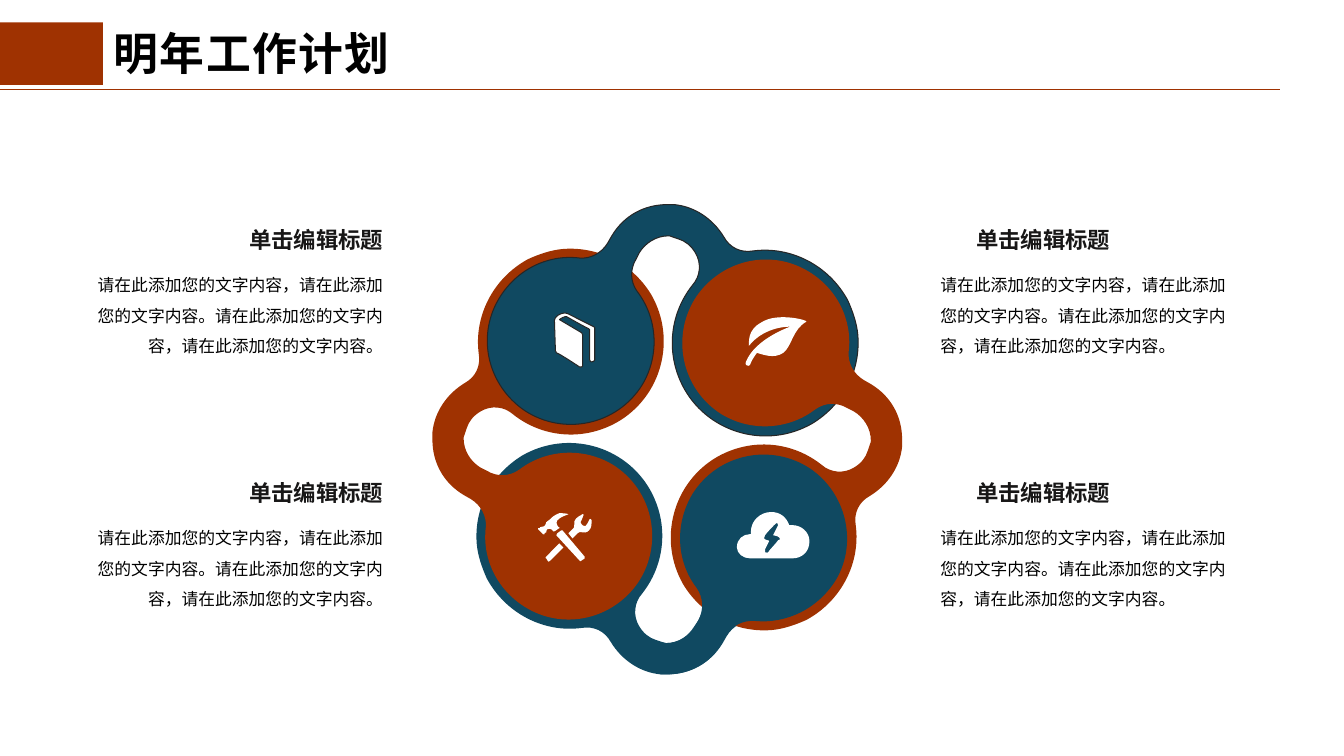
import pptx
import pptx.util
import pptx.dml.color
import pptx.enum.shapes
import pptx.enum.text
import pptx.oxml
import pptx.oxml.ns

Pt = pptx.util.Pt
Align = pptx.enum.text.PP_ALIGN
RED, BLUE, WHITE, DARK, BLACK = "9F3201", "104961", "FFFFFF", "262626", "000000"
UNIT = 0.72

LINK = """M 129 0 C 164 -3 198 14 217 45 C 243 90 227 147 183 172 C 149 191 109 187 80 164
C 71 156 58 155 48 161 C 41 165 36 171 34 178 L 32 184 C 31 186 31 187 31 188
C 31 200 38 211 48 217 L 54 220 C 64 226 76 226 86 219 C 112 199 149 196 179 214
C 219 239 230 292 204 331 C 179 367 132 378 95 357 C 65 340 49 308 53 276
C 54 265 48 254 38 248 L 31 244 C 11 232 0 212 0 189 L 0 182 C 2 162 14 144 32 133
C 43 127 48 116 46 104 C 41 67 60 29 95 10 C 106 5 118 1 129 0"""
TAIL = """M 32 51 C 14 81 16 118 36 144 C 43 154 43 166 38 176 L 34 182 C 28 192 18 199 6 199
L 2 198 L 0 230 L 7 230 C 30 230 50 218 61 199 L 66 191
C 71 182 82 176 94 177 C 125 180 157 165 175 135 C 196 98 184 50 149 26 C 110 0 57 11 32 51"""
TOOLS = """M 9 16 C 10 15 13 15 15 18 L 16 18 C 17 18 20 15 21 15 L 21 14
C 20 14 19 13 19 12 C 14 5 32 1 30 1 C 28 0 22 0 21 0 C 18 1 13 4 12 6 C 9 8 8 9 8 9
C 7 10 8 12 6 13 C 4 14 3 13 2 14 C 2 15 1 15 0 15 L 0 16 L 4 20 C 4 21 5 21 6 21
C 6 20 7 19 8 19 C 8 19 8 16 9 16
M 24 17 L 23 17 L 19 20 C 18 21 18 21 18 22 L 41 47 C 41 48 42 48 43 47 L 46 45
C 46 44 46 43 46 43
M 53 7 C 52 5 52 6 51 6 C 51 7 49 9 49 10 C 48 12 47 14 44 12 C 41 9 42 8 43 7
C 43 6 45 3 45 2 C 46 2 45 1 44 1 C 43 2 37 4 36 8 C 35 11 37 14 34 16 L 30 20 L 34 25
L 39 20 C 40 19 42 18 44 19 C 48 20 50 18 52 15 C 53 13 53 8 53 7
M 8 43 C 7 44 7 45 8 45 L 10 48 C 10 48 12 48 12 47 L 25 34 L 21 30"""
BOOK = """M 39 15 L 13 2 C 10 0 3 3 1 6 C 0 8 0 9 0 9 L 1 39 C 1 39 2 40 2 41
C 4 41 25 55 25 55 L 27 55 L 28 54 L 28 23 C 28 22 28 22 27 21 L 5 8
C 5 8 6 7 8 6 C 10 5 11 5 12 5 C 12 5 33 17 34 17 L 35 18 L 35 48
C 35 49 36 50 37 50 C 38 50 40 49 40 48 L 40 16"""
LEAF = """M 17 11 C 4 18 5 29 5 34 C 21 14 46 15 46 15 C 46 15 11 27 2 50 C 0 53 5 55 6 53
C 8 47 13 41 13 41 C 20 43 30 47 39 41 C 48 34 48 18 62 10 C 65 9 33 0 17 11"""
CLOUD = """M 55 13 L 52 13 C 49 5 43 0 34 0 C 23 0 14 9 14 19 L 14 22 L 13 22
C 6 22 0 27 0 35 C 0 41 6 46 13 46 L 55 46 C 64 46 72 40 72 29 C 72 20 64 13 55 13
M 41 28 C 39 31 32 38 31 40 C 31 40 30 41 28 40 L 28 37 L 32 29
C 32 28 31 28 30 28 C 28 27 27 27 27 26 C 27 24 27 24 28 23 C 30 20 37 13 37 13
C 39 11 39 11 40 11 L 41 13 L 40 15 L 36 23 C 37 23 39 24 40 24
C 41 24 43 26 43 27"""

HEAD = "单击编辑标题"
BODY = "请在此添加您的文字内容，请在此添加您的文字内容。" * 2


def color(code):
    """Turn a hex string into a colour."""
    return pptx.dml.color.RGBColor.from_string(code)


def paint(shape, fill, line=None):
    """Give a shape a flat fill and an optional thin outline."""
    shape.shadow.inherit = False
    shape.fill.solid()
    shape.fill.fore_color.rgb = color(fill)
    if line:
        shape.line.color.rgb = color(line)
        shape.line.width = Pt(0.75)
    else:
        shape.line.fill.background()


def trace(text):
    """Turn an outline string into rings with three points a segment."""
    rings = []
    marks = iter(text.split())
    for mark in marks:
        count = 3 if mark == "C" else 1
        points = [(int(next(marks)), int(next(marks))) for _ in range(count)]
        if mark == "M":
            rings.append(points)
        elif mark == "C":
            rings[-1] += points
        else:
            rings[-1] += [rings[-1][-1], *points, *points]
    return rings


def curve(shape):
    """Turn each three straight segments of a shape into one cubic curve."""
    lines = list(shape.element.iter(pptx.oxml.ns.qn("a:lnTo")))
    for first in range(0, len(lines), 3):
        bend = lines[first].makeelement(pptx.oxml.ns.qn("a:cubicBezTo"))
        lines[first].addprevious(bend)
        for line in lines[first:first + 3]:
            bend.append(line[0])
            line.getparent().remove(line)


def spin(point, turns):
    """Turn a point about zero by clockwise quarters."""
    x, y = point
    for _ in range(turns % 4):
        x, y = -y, x
    return x, y


def draw(slide, left, top, text, fill, line=None, turns=0, hub=(0, 0)):
    """Draw an outline whose hub lies at the given place."""
    rings = [[spin((x - hub[0], y - hub[1]), turns) for x, y in ring] for ring in trace(text)]
    form = slide.shapes.build_freeform(*rings[0][0], scale=Pt(UNIT))
    for index, ring in enumerate(rings):
        if index:
            form.move_to(*ring[0])
        form.add_line_segments(ring[1:], close=True)
    shape = form.convert_to_shape(Pt(left), Pt(top))
    curve(shape)
    paint(shape, fill, line)


def write(slide, box, text, size, code, bold=False, align=Align.LEFT, space=None):
    """Place one paragraph in a wrapping text box."""
    shape = slide.shapes.add_textbox(*map(Pt, box))
    frame = shape.text_frame
    frame.word_wrap = True
    frame.text = text
    para = frame.paragraphs[0]
    para.alignment = align
    if space:
        para.line_spacing = space
    font = para.runs[0].font
    font.name, font.size, font.bold = "Arial", Pt(size), bold
    font.color.rgb = color(code)
    return shape


def header(slide, left, top, width):
    """Draw the title with its block and rule."""
    rule = slide.shapes.add_connector(pptx.enum.shapes.MSO_CONNECTOR.STRAIGHT,
                                      Pt(left), Pt(top + 48.2), Pt(left + width), Pt(top + 48.2))
    rule.line.color.rgb = color(RED)
    rule.line.width = Pt(0.5)
    rule.element.spPr.append(pptx.oxml.parse_xml(
        '<a:effectLst xmlns:a="http://schemas.openxmlformats.org/drawingml/2006/main"/>'))
    title = write(slide, (left + 74.2, top, 573, 41), "明年工作计划", 32, BLACK, True, space=0.9)
    title.text_frame.margin_bottom = 0
    title.text_frame.vertical_anchor = pptx.enum.text.MSO_ANCHOR.BOTTOM
    title.text_frame.paragraphs[0].runs[0].font._element.set("spc", "100")
    block = slide.shapes.add_shape(pptx.enum.shapes.MSO_SHAPE.RECTANGLE,
                                   Pt(left), Pt(top), Pt(73.5), Pt(44.7))
    paint(block, RED)


def wheel(slide, left, top, size):
    """Draw four woven links and their icons in a square box."""
    x, y = left + size / 2, top + size / 2
    links = [(-1, BLUE, None), (0, RED, None), (1, BLUE, DARK), (2, RED, None)]
    for turns, fill, line in links:
        draw(slide, x, y, LINK, fill, line, turns, (233, 189))
    draw(slide, x - 5, y + 2.2, TAIL, BLUE)
    icons = [(TOOLS, -92.2, 52.6, None), (BOOK, -80.6, -91.4, DARK),
             (LEAF, 54.7, -91.4, None), (CLOUD, 49.7, 51.8, None)]
    for icon, across, down, line in icons:
        draw(slide, x + across, y + down, icon, WHITE, line)


def note(slide, left, top, width, align, span):
    """Place a heading over its text, with the heading span wide."""
    start = left + width - span if align == Align.RIGHT else left
    for shape in (write(slide, (start, top, span, 26.6), HEAD, 16, "181717", True, Align.RIGHT),
                  write(slide, (left, top + 28, width, 70), BODY, 12, BLACK, False, align, 1.5)):
        shape.text_frame.auto_size = pptx.enum.text.MSO_AUTO_SIZE.SHAPE_TO_FIT_TEXT


def main():
    """Build the slide and save it."""
    deck = pptx.Presentation()
    deck.slide_width, deck.slide_height = Pt(960), Pt(540)
    slide = deck.slides.add_slide(deck.slide_layouts[6])
    header(slide, 0, 16, 914.5)
    wheel(slide, 308.9, 146.2, 335.5)
    for top in (157.7, 338.4):
        note(slide, 58.3, top, 222.5, Align.RIGHT, 141)
        note(slide, 664.6, top, 222.5, Align.LEFT, 135.4)
    deck.save("out.pptx")


if __name__ == "__main__":
    main()
